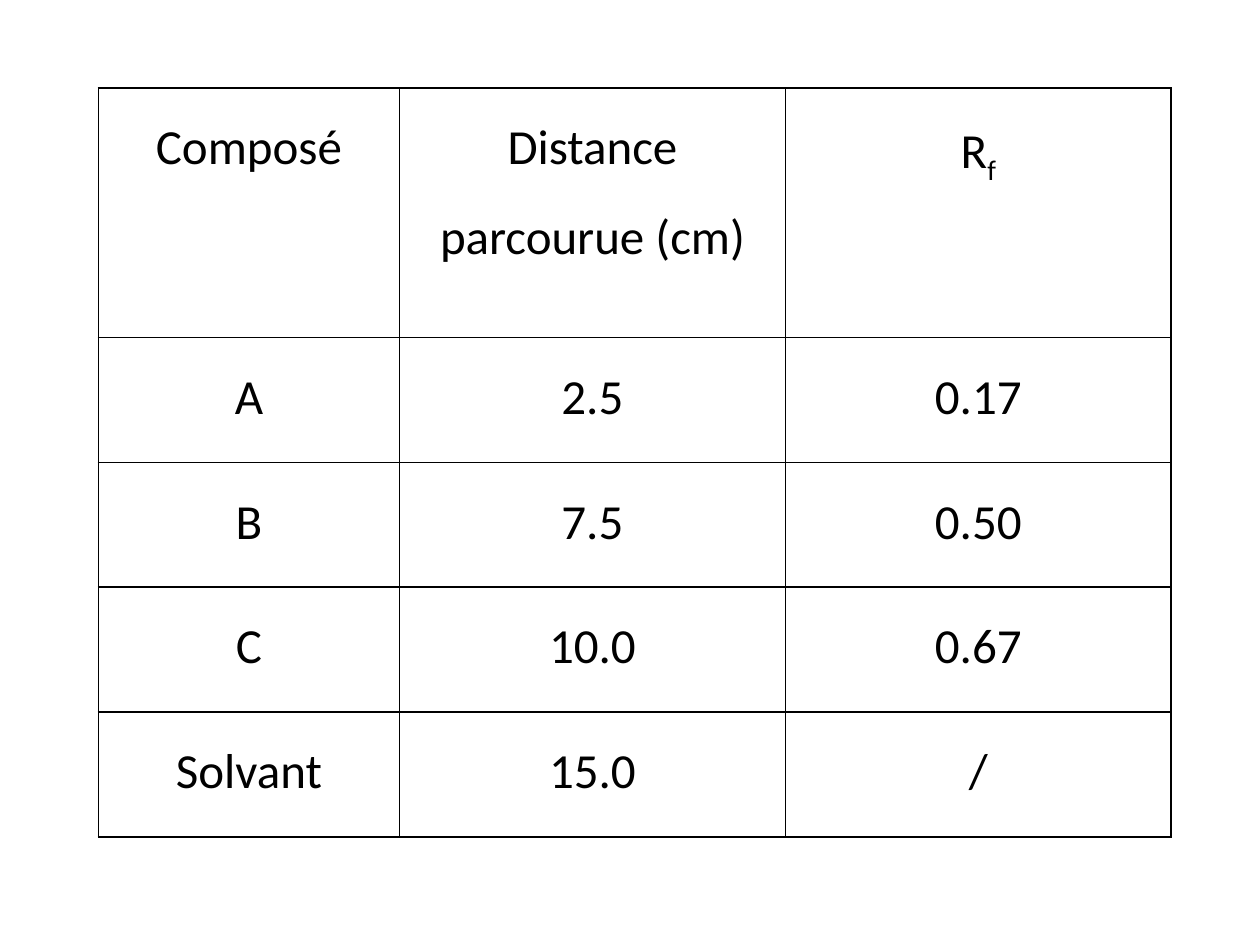
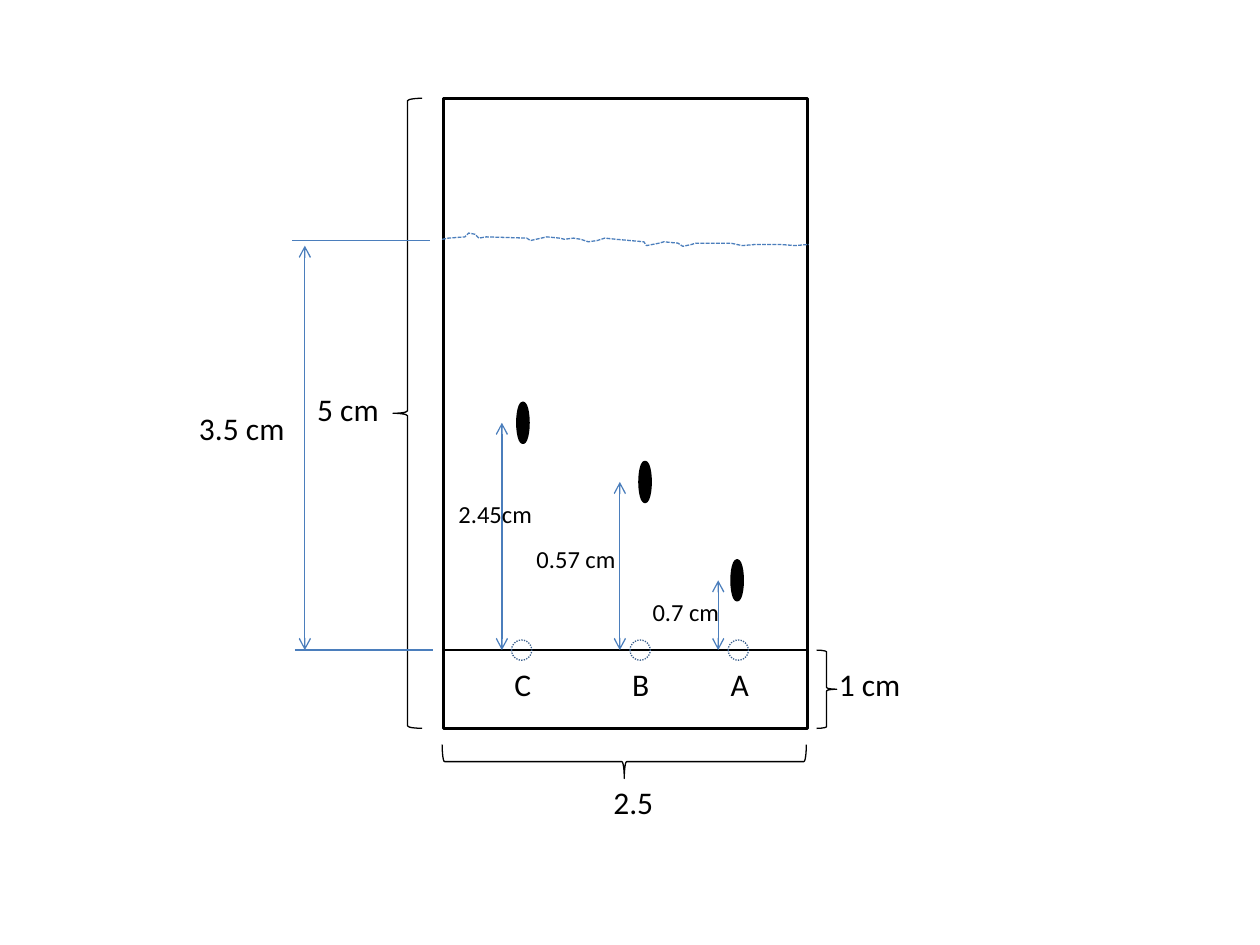
from lxml import etree
from pptx import Presentation
from pptx.dml.color import RGBColor
from pptx.enum.dml import MSO_LINE
from pptx.enum.shapes import MSO_CONNECTOR, MSO_SHAPE
from pptx.enum.text import MSO_AUTO_SIZE, PP_ALIGN
from pptx.oxml.ns import qn
from pptx.util import Pt

BLACK = RGBColor(0x00, 0x00, 0x00)
WHITE = RGBColor(0xFF, 0xFF, 0xFF)
BLUE = RGBColor(0x4B, 0x7E, 0xBC)
DARK_BLUE = RGBColor(0x3A, 0x5F, 0x8C)

FONT = "Calibri"
BLANK_LAYOUT = 6
CENTER = PP_ALIGN.CENTER
NO_RESIZE = MSO_AUTO_SIZE.NONE
STRAIGHT = MSO_CONNECTOR.STRAIGHT
RECTANGLE, ELLIPSE = MSO_SHAPE.RECTANGLE, MSO_SHAPE.OVAL
LEFT_BRACE, RIGHT_BRACE = MSO_SHAPE.LEFT_BRACE, MSO_SHAPE.RIGHT_BRACE
DOTTED, DASHED = MSO_LINE.ROUND_DOT, MSO_LINE.SQUARE_DOT

RF_ROWS = [
    ("Composé", "Distance parcourue (cm)", "Rf"),
    ("A", "2.5", "0.17"),
    ("B", "7.5", "0.50"),
    ("C", "10.0", "0.67"),
    ("Solvant", "15.0", "/"),
]

PLATE_LEFT, PLATE_TOP, PLATE_WIDTH, PLATE_HEIGHT = 253.4, 56.2, 208.1, 360
PLATE_RIGHT = PLATE_LEFT + PLATE_WIDTH
PLATE_BOTTOM = PLATE_TOP + PLATE_HEIGHT
BASELINE = 371.5
FRONT = 137.5
LETTER_TOP = 376.6

# compound, deposit centre x, spot centre (x, y), arrow x, distance and its box
LANES = [
    ("A", 421.9, (421.2, 331.6), 410.4, "0.7 cm", (365.8, 337.7, 52.6)),
    ("B", 365.8, (368.6, 275.4), 354.2, "0.57 cm", (299.5, 307.4, 59.8)),
    ("C", 298.1, (298.8, 241.6), 286.8, "2.45cm", (254.9, 281.5, 56.9)),
]

SOLVENT_FRONT = [
    (252.7, 136.8), (256.3, 136.1), (265.7, 135.4), (267.8, 133.2),
    (271.4, 133.9), (273.6, 136.1), (277.9, 135.4), (301, 136.1),
    (303.1, 137.5), (312.5, 135.4), (319.7, 136.1), (322.6, 136.8),
    (327.6, 136.1), (331.9, 136.8), (336.2, 138.2), (341.3, 137.5),
    (345.6, 136.1), (352.1, 136.8), (367.9, 138.2), (369.4, 140.4),
    (376.6, 139), (379.4, 138.2), (387.4, 139), (390.2, 140.8),
    (395.3, 139.7), (397.4, 139), (417.6, 139), (424.1, 140.4),
    (432, 139.7), (445.7, 139.7), (454.3, 140.4), (462.2, 139.7),
]


class Deck:
    def __init__(self):
        self.prs = Presentation()
        self.prs.slide_width, self.prs.slide_height = Pt(720), Pt(540)
        self.slide = None

    def new_slide(self):
        self.slide = self.prs.slides.add_slide(self.prs.slide_layouts[BLANK_LAYOUT])

    def run(self, paragraph, text, size, baseline=0):
        run = paragraph.add_run()
        run.text = text
        run.font.name, run.font.size = FONT, Pt(size)
        run.font.color.rgb = BLACK
        if baseline:
            run._r.get_or_add_rPr().set("baseline", str(baseline))

    def label(self, text, left, top, width, size=18):
        height = 28.8 if size == 18 else 24.5
        box = self.slide.shapes.add_textbox(Pt(left), Pt(top), Pt(width), Pt(height))
        box.text_frame.word_wrap = False
        box.text_frame.auto_size = NO_RESIZE
        self.run(box.text_frame.paragraphs[0], text, size)

    def outline(self, shape, color, weight, dash=None, fill=None):
        shape.shadow.inherit = False
        if fill is None:
            shape.fill.background()
        else:
            shape.fill.solid()
            shape.fill.fore_color.rgb = fill
        shape.line.color.rgb = color
        shape.line.width = Pt(weight)
        if dash is not None:
            shape.line.dash_style = dash

    def shape(self, preset, left, top, width, height,
              color=BLACK, weight=0.75, dash=None, fill=None):
        shape = self.slide.shapes.add_shape(
            preset, Pt(left), Pt(top), Pt(width), Pt(height))
        self.outline(shape, color, weight, dash, fill)
        return shape

    def ellipse(self, center_x, center_y, width, height, **style):
        self.shape(ELLIPSE, center_x - width / 2, center_y - height / 2,
                   width, height, **style)

    def freeform(self, points, color, dash):
        (start_x, start_y), *others = points
        builder = self.slide.shapes.build_freeform(Pt(start_x), Pt(start_y))
        builder.add_line_segments([(Pt(x), Pt(y)) for x, y in others], close=False)
        self.outline(builder.convert_to_shape(), color, 0.75, dash)

    def line(self, x1, y1, x2, y2, color=BLUE, arrows=False):
        line = self.slide.shapes.add_connector(STRAIGHT, Pt(x1), Pt(y1), Pt(x2), Pt(y2))
        line.line.color.rgb = color
        line.line.width = Pt(0.75)
        properties = line._element.spPr
        if arrows:
            for end in ("a:headEnd", "a:tailEnd"):
                etree.SubElement(properties.find(qn("a:ln")), qn(end), type="arrow")
        etree.SubElement(properties, qn("a:effectLst"))

    def cell_borders(self, cell):
        properties = cell._tc.get_or_add_tcPr()
        for side in ("a:lnL", "a:lnR", "a:lnT", "a:lnB"):
            border = etree.SubElement(properties, qn(side), w=str(Pt(1)))
            fill = etree.SubElement(border, qn("a:solidFill"))
            etree.SubElement(fill, qn("a:srgbClr"), val=str(BLACK))

    def table(self, rows, left, top, widths, heights, size):
        table = self.slide.shapes.add_table(
            len(rows), len(widths), Pt(left), Pt(top),
            Pt(sum(widths)), Pt(sum(heights))).table
        table.first_row = table.horz_banding = False
        for column, width in zip(table.columns, widths):
            column.width = Pt(width)
        for row, height, texts in zip(table.rows, heights, rows):
            row.height = Pt(height)
            for cell, text in zip(row.cells, texts):
                self.cell_borders(cell)
                cell.fill.background()
                cell.margin_left = cell.margin_right = Pt(5)
                cell.margin_top = cell.margin_bottom = Pt(0)
                paragraph = cell.text_frame.paragraphs[0]
                paragraph.alignment = CENTER
                paragraph.line_spacing = 1.5
                if text == "Rf":
                    self.run(paragraph, "R", size)
                    self.run(paragraph, "f", size, baseline=-25000)
                else:
                    self.run(paragraph, text, size)


def build_rf_table(deck):
    deck.new_slide()
    deck.table(RF_ROWS, 56.2, 50.4, [172.1, 220.5, 220.5], [142.6] + [71.3] * 4, 28)


def build_plate(deck):
    """Chromatography plate with its dimensions, solvent front and spots."""
    deck.new_slide()
    deck.shape(RECTANGLE, PLATE_LEFT, PLATE_TOP, PLATE_WIDTH, PLATE_HEIGHT,
               weight=2, fill=WHITE)
    deck.line(PLATE_LEFT, BASELINE, PLATE_RIGHT, BASELINE, BLACK)

    deck.shape(RIGHT_BRACE, 466.6, BASELINE, 11.5, PLATE_BOTTOM - BASELINE)
    deck.label("1 cm", 472.3, LETTER_TOP, 50.4)
    width_brace = deck.shape(RIGHT_BRACE, 347, 331.2, 19.4, PLATE_WIDTH)
    width_brace.rotation = 90
    width_brace.adjustments[0] = 0.07
    deck.label("2.5", 343.4, 444.2, 37.4)
    deck.shape(LEFT_BRACE, 224.6, PLATE_TOP, 16.6, PLATE_HEIGHT)
    deck.label("5 cm", 174.2, 219.6, 50.4)

    deck.freeform(SOLVENT_FRONT, BLUE, DASHED)
    deck.line(167, FRONT, 245.5, FRONT)
    deck.line(168.5, BASELINE, 247.7, BASELINE)
    deck.line(174.2, 140.4, 174.2, BASELINE, arrows=True)
    deck.label("3.5 cm", 106.6, 230.4, 64.1)

    for compound, deposit_x, spot, arrow_x, distance, distance_box in LANES:
        deck.ellipse(deposit_x, BASELINE, 11.5, 11.5, color=DARK_BLUE, dash=DOTTED)
        deck.label(compound, arrow_x, LETTER_TOP, 24.8)
        deck.ellipse(*spot, 5.8, 22.3, weight=2, fill=BLACK)
        deck.line(arrow_x, spot[1], arrow_x, BASELINE, arrows=True)
        deck.label(distance, *distance_box, size=14)


def main():
    deck = Deck()
    build_rf_table(deck)
    build_plate(deck)
    deck.prs.save("out.pptx")


if __name__ == "__main__":
    main()
